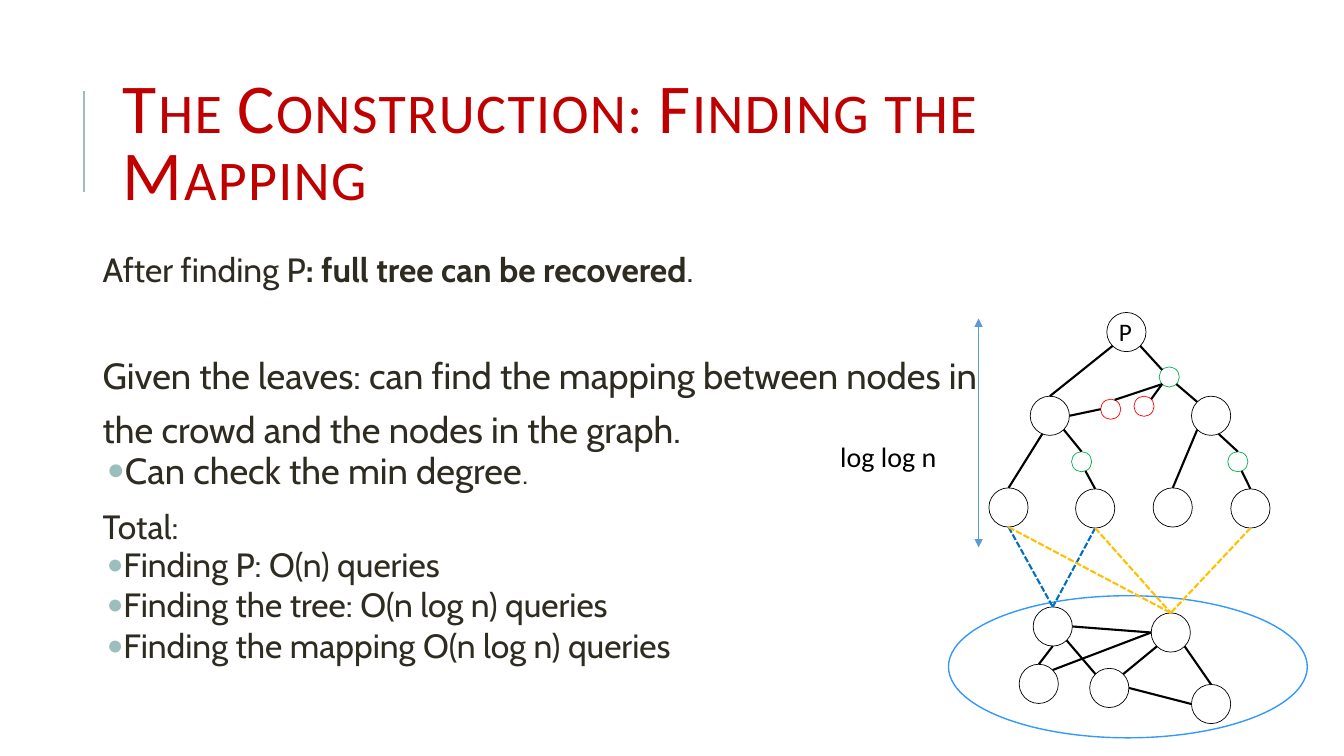
from collections import namedtuple
from math import cos, radians, sin

from lxml.etree import SubElement
from pptx import Presentation
from pptx.dml.color import RGBColor
from pptx.enum.dml import MSO_LINE
from pptx.enum.shapes import MSO_CONNECTOR, MSO_SHAPE
from pptx.enum.text import MSO_ANCHOR, MSO_AUTO_SIZE, PP_ALIGN
from pptx.oxml.ns import qn
from pptx.util import Pt

Box = namedtuple("Box", "left top width height")

BLACK, WHITE, GREEN, RED = "000000", "FFFFFF", "00B050", "FF0000"
BLUE, ORANGE, TEAL, INK = "0070C0", "FFC000", "9CBEBD", "2E2B21"
BIG, SMALL = 14, 7.2

# Clockwise angles from east
COMPASS = {"E": 0, "SE": 45, "SSE": 67.5, "S": 90, "SSW": 112.5, "SW": 135,
           "W": 180, "NW": 225, "N": 270, "NNE": 292.5, "NE": 315}

# name: (centre x, centre y, radius, outline)
NODES = {
    "root": (127.1, 14, BIG, BLACK),
    "inner left": (72.4, 73.8, BIG, BLACK),
    "inner right": (187.6, 73.8, BIG, BLACK),
    "leaf 1": (42.9, 139.3, BIG, BLACK),
    "leaf 2": (104.8, 140, BIG, BLACK),
    "leaf 3": (160.2, 139.3, BIG, BLACK),
    "leaf 4": (215.7, 140, BIG, BLACK),
    "green top": (157.7, 46.1, SMALL, GREEN),
    "green left": (95.1, 106.6, SMALL, GREEN),
    "green right": (206.7, 106.6, SMALL, GREEN),
    "red left": (115.9, 69.1, SMALL, RED),
    "red right": (139.7, 67, SMALL, RED),
    "hub left": (74.5, 224.3, BIG, BLACK),
    "hub right": (158.8, 228.6, BIG, BLACK),
    "low 1": (64.5, 265.3, BIG, BLACK),
    "low 2": (114.9, 268.2, BIG, BLACK),
    "low 3": (187.6, 279.7, BIG, BLACK),
}

TREE_EDGES = [
    ("inner left", "N", "root", "SW"), ("green top", "NW", "root", "SE"),
    ("leaf 1", "N", "inner left", "SSW"), ("green left", "N", "inner left", "SE"),
    ("leaf 2", "N", "green left", "SSE"), ("inner right", "NW", "green top", "SE"),
    ("leaf 3", "N", "inner right", "SW"), ("green right", "N", "inner right", "SSE"),
    ("leaf 4", "N", "green right", "SSE"), ("inner left", "E", "red left", "W"),
    ("red left", "NNE", "green top", "SW"), ("red right", "NE", "green top", "SW"),
]
GRAPH_EDGES = [
    ("hub left", "E", "hub right", "W"), ("low 1", "N", "hub left", "S"),
    ("hub left", "SE", "low 2", "NW"), ("low 2", "NE", "hub right", "SW"),
    ("low 2", "E", "low 3", "W"), ("low 3", "N", "hub right", "SE"),
    ("low 1", "NE", "hub right", "W"),
]
BLUE_EDGES = [(leaf, "S", "hub left", "N") for leaf in ("leaf 1", "leaf 2")]
ORANGE_EDGES = [(leaf, "S", "hub right", "N") for leaf in ("leaf 1", "leaf 2", "leaf 4")]

# (level, extra space before, [(text, size, bold)])
BODY = [
    (0, 0, [("After finding P", 24, False), (": full tree can be recovered", 24, True),
            (".", 24, False)]),
    (0, 37.4, [("Given the leaves: can find the mapping between nodes in", 26, False)]),
    (0, 0, [("the crowd and the nodes in the graph.", 26, False)]),
    (1, 0, [("Can check the min degree", 26, False), (".", 20, False)]),
    (0, 0, [("Total:", 24, False)]),
    (1, 0, [("Finding P: O(n) queries", 24, False)]),
    (1, 0, [("Finding the tree: O(n log n) queries", 24, False)]),
    (1, 0, [("Finding the mapping O(n log n) queries", 24, False)]),
]


def color(value):
    return RGBColor.from_string(value)


def apply(target, formats):
    for name, value in formats.items():
        setattr(target, name, value)


def add_run(paragraph, text, font_color, **formats):
    run = paragraph.add_run()
    run.text = text
    apply(run.font, formats)
    run.font.color.rgb = color(font_color)
    return run


def add_line(slide, start, end, line_color, width, dash=None):
    line = slide.shapes.add_connector(
        MSO_CONNECTOR.STRAIGHT, *(Pt(value) for value in (*start, *end)))
    line.line.color.rgb = color(line_color)
    line.line.width = Pt(width)
    if dash:
        line.line.dash_style = dash
    SubElement(line._element.spPr, qn("a:effectLst"))
    return line


def add_ellipse(slide, box, line_color, width):
    ellipse = slide.shapes.add_shape(MSO_SHAPE.OVAL, *(Pt(value) for value in box))
    ellipse.shadow.inherit = False
    ellipse.fill.solid()
    ellipse.fill.fore_color.rgb = color(WHITE)
    ellipse.line.color.rgb = color(line_color)
    ellipse.line.width = Pt(width)


def add_label(slide, box, text, size, alignment):
    label = slide.shapes.add_textbox(*(Pt(value) for value in box))
    label.text_frame.word_wrap = True
    paragraph = label.text_frame.paragraphs[0]
    paragraph.alignment = alignment
    add_run(paragraph, text, BLACK, name="Calibri", size=Pt(size))


def draw_title(slide, box):
    add_line(slide, (box.left - 20.6, 136.8), (box.left - 20.6, 64.8), TEAL, 1.5)
    title = slide.shapes.title
    apply(title, {side: Pt(value) for side, value in box._asdict().items()})
    apply(title.text_frame, {"word_wrap": True, "auto_size": MSO_AUTO_SIZE.NONE,
                             "vertical_anchor": MSO_ANCHOR.MIDDLE})
    paragraph = title.text_frame.paragraphs[0]
    apply(paragraph, {"alignment": PP_ALIGN.LEFT, "line_spacing": 0.8})
    run = add_run(paragraph, "The Construction: Finding the Mapping", "C00000",
                  name="Calibri", size=Pt(50))
    properties = run.font._element
    properties.set("cap", "small")
    properties.set("spc", "100")


def set_bullet(paragraph):
    properties = paragraph._p.get_or_add_pPr()
    SubElement(SubElement(properties, qn("a:buClr")), qn("a:srgbClr"), val=TEAL)
    SubElement(properties, qn("a:buFont"), typeface="Calibri")
    SubElement(properties, qn("a:buChar"), char="•")


def draw_body(slide, box):
    frame = slide.shapes.add_textbox(*(Pt(value) for value in box)).text_frame
    apply(frame, {"word_wrap": True, "margin_left": Pt(3.6), "margin_right": Pt(3.6),
                  "margin_top": Pt(3.6), "margin_bottom": Pt(3.6)})
    for index, (level, extra, runs) in enumerate(BODY):
        paragraph = frame.add_paragraph() if index else frame.paragraphs[0]
        before, after, margin, indent = ((12, 2, 7.2, 0), (2, 4, 20.9, -10.8))[level]
        apply(paragraph, {"level": level, "line_spacing": 0.8,
                          "space_before": Pt(before + extra), "space_after": Pt(after)})
        properties = paragraph._p.get_or_add_pPr()
        properties.set("marL", str(Pt(margin)))
        properties.set("indent", str(Pt(indent)))
        if level:
            set_bullet(paragraph)
        for text, size, bold in runs:
            add_run(paragraph, text, INK, name="Cabin", size=Pt(size), bold=bold)


def rim_point(box, node, direction):
    """Point on a node's outline in the given compass direction."""
    x, y, radius, _ = NODES[node]
    angle = radians(COMPASS[direction])
    return box.left + x + radius * cos(angle), box.top + y + radius * sin(angle)


def draw_tree_and_graph(slide, box):
    crowd_height = 101.5
    add_ellipse(slide, Box(box.left, box.top + box.height - crowd_height,
                           box.width, crowd_height), "3399FF", 1)
    for x, y, radius, outline in NODES.values():
        add_ellipse(slide, Box(box.left + x - radius, box.top + y - radius,
                               2 * radius, 2 * radius), outline, 0.5)
    for edges, edge_color, dash in ((GRAPH_EDGES, BLACK, None),
                                    (BLUE_EDGES, BLUE, MSO_LINE.SQUARE_DOT),
                                    (ORANGE_EDGES, ORANGE, MSO_LINE.SQUARE_DOT),
                                    (TREE_EDGES, BLACK, None)):
        for start, leaving, end, arriving in edges:
            add_line(slide, rim_point(box, start, leaving), rim_point(box, end, arriving),
                     edge_color, 1.5, dash)
    add_label(slide, Box(box.left + 114.5, box.top - 0.7, 23.8, 29), "P", 18, PP_ALIGN.CENTER)


def draw_height(slide, box):
    right = box.left + box.width
    arrow = add_line(slide, (right, box.top), (right, box.top + box.height), "5B9BD5", 1)
    outline = arrow.line._get_or_add_ln()
    for end in ("a:headEnd", "a:tailEnd"):
        SubElement(outline, qn(end), type="triangle")
    add_label(slide, Box(box.left, box.top + 82.8, 95, 31.7), "log log n", 20, PP_ALIGN.RIGHT)


def main():
    deck = Presentation()
    deck.slide_width, deck.slide_height = Pt(960), Pt(540)
    slide = deck.slides.add_slide(deck.slide_layouts[5])
    draw_title(slide, Box(80.6, 46, 765.4, 118))
    draw_body(slide, Box(62.6, 180, 765.4, 316.8))
    draw_tree_and_graph(slide, Box(677.5, 223.2, 256.3, 303.8))
    draw_height(slide, Box(581, 227.5, 118, 163.5))
    deck.save("out.pptx")


if __name__ == "__main__":
    main()
